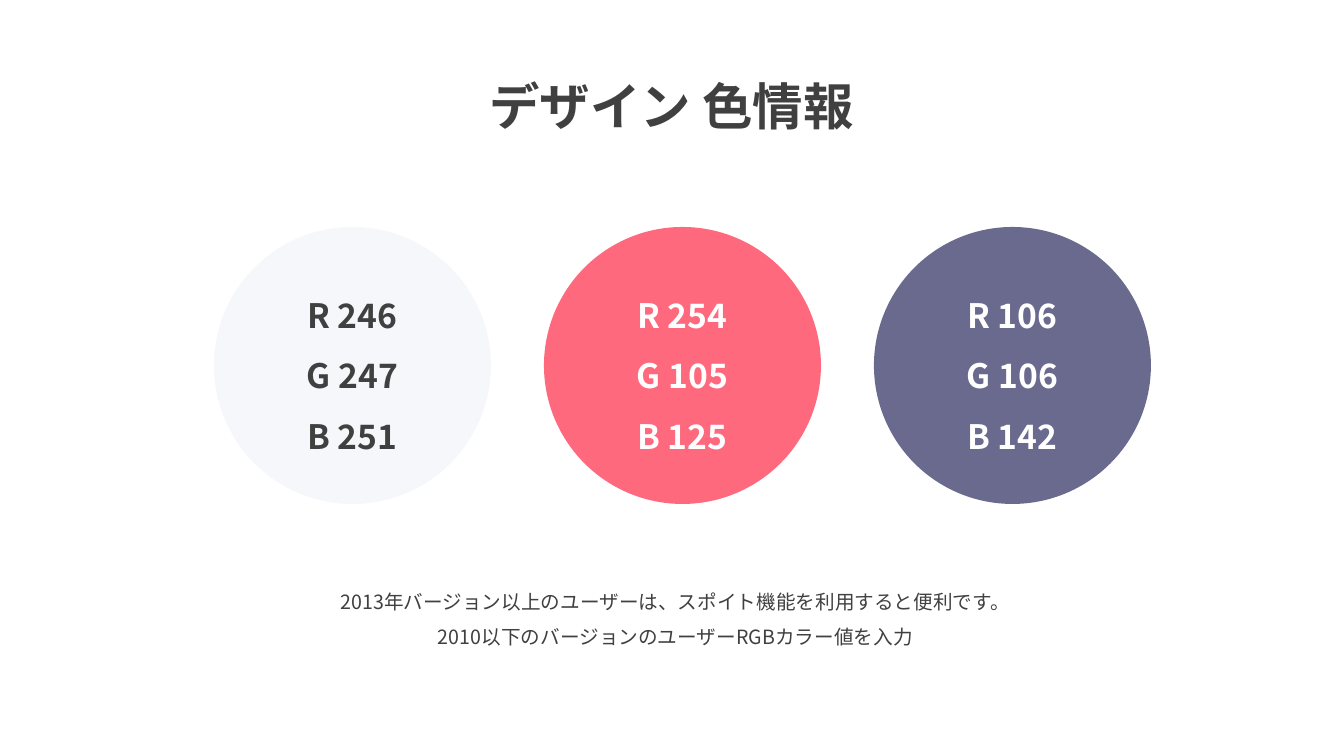
from lxml.etree import SubElement
from pptx import Presentation
from pptx.dml.color import RGBColor
from pptx.enum.shapes import MSO_SHAPE as Shape
from pptx.enum.text import MSO_ANCHOR as Anchor, MSO_AUTO_SIZE as AutoSize, PP_ALIGN as Align
from pptx.oxml.ns import qn
from pptx.util import Pt

EMU_PER_PX = 914400 / 100.8
FONT = "Noto Sans CJK KR"
COLORS = {
    "ink": "404040",
    "white": "FFFFFF",
    "mist": "F6F7FB",
    "coral": "FE697D",
    "slate": "6A6A8E",
}


def px(length):
    return round(length * EMU_PER_PX)


def color(name):
    return RGBColor.from_string(COLORS[name])


def write(frame, lines, size, ink="ink", bold=False, anchor=Anchor.TOP):
    """Fill the frame with one centred paragraph per line."""
    frame.word_wrap = True
    frame.vertical_anchor = anchor
    for number, line in enumerate(lines):
        paragraph = frame.add_paragraph() if number else frame.paragraphs[0]
        paragraph.alignment = Align.CENTER
        paragraph.line_spacing = 1.5
        run = paragraph.add_run()
        run.text = line
        font = run.font
        font.name, font.size, font.bold = FONT, Pt(size), bold
        font.color.rgb = color(ink)
        # Japanese characters take their typeface from a:ea
        SubElement(run._r.get_or_add_rPr(), qn("a:ea"), typeface=FONT)


class ColorSlide:
    def __init__(self, deck):
        self.slide = deck.slides.add_slide(deck.slide_layouts[6])

    def text(self, box, lines, size, **style):
        frame = self.slide.shapes.add_textbox(*map(px, box)).text_frame
        write(frame, lines, size, **style)
        frame.auto_size = AutoSize.SHAPE_TO_FIT_TEXT

    def swatch(self, box, fill, lines, ink):
        circle = self.slide.shapes.add_shape(Shape.OVAL, *map(px, box))
        circle.shadow.inherit = False
        circle.fill.solid()
        circle.fill.fore_color.rgb = color(fill)
        circle.line.fill.background()
        write(circle.text_frame, lines, 24, ink=ink, bold=True, anchor=Anchor.MIDDLE)


def main():
    deck = Presentation()
    deck.slide_width, deck.slide_height = px(1344), px(756)
    page = ColorSlide(deck)

    page.text((427, 40, 489, 92), ["デザイン 色情報"], 36, bold=True)

    first_left, step, diameter = 214, 330, 277
    swatches = [("mist", "ink"), ("coral", "white"), ("slate", "white")]
    for column, (fill, ink) in enumerate(swatches):
        channels = [f"{letter} {value}" for letter, value in zip("RGB", color(fill))]
        page.swatch((first_left + column * step, 227, diameter, diameter), fill, channels, ink)

    page.text(
        (254, 573, 843, 78),
        [
            "2013年バージョン以上のユーザーは、スポイト機能を利用すると便利です。",
            "2010以下のバージョンのユーザーRGBカラー値を入力",
        ],
        14,
    )
    deck.save("out.pptx")


if __name__ == "__main__":
    main()
